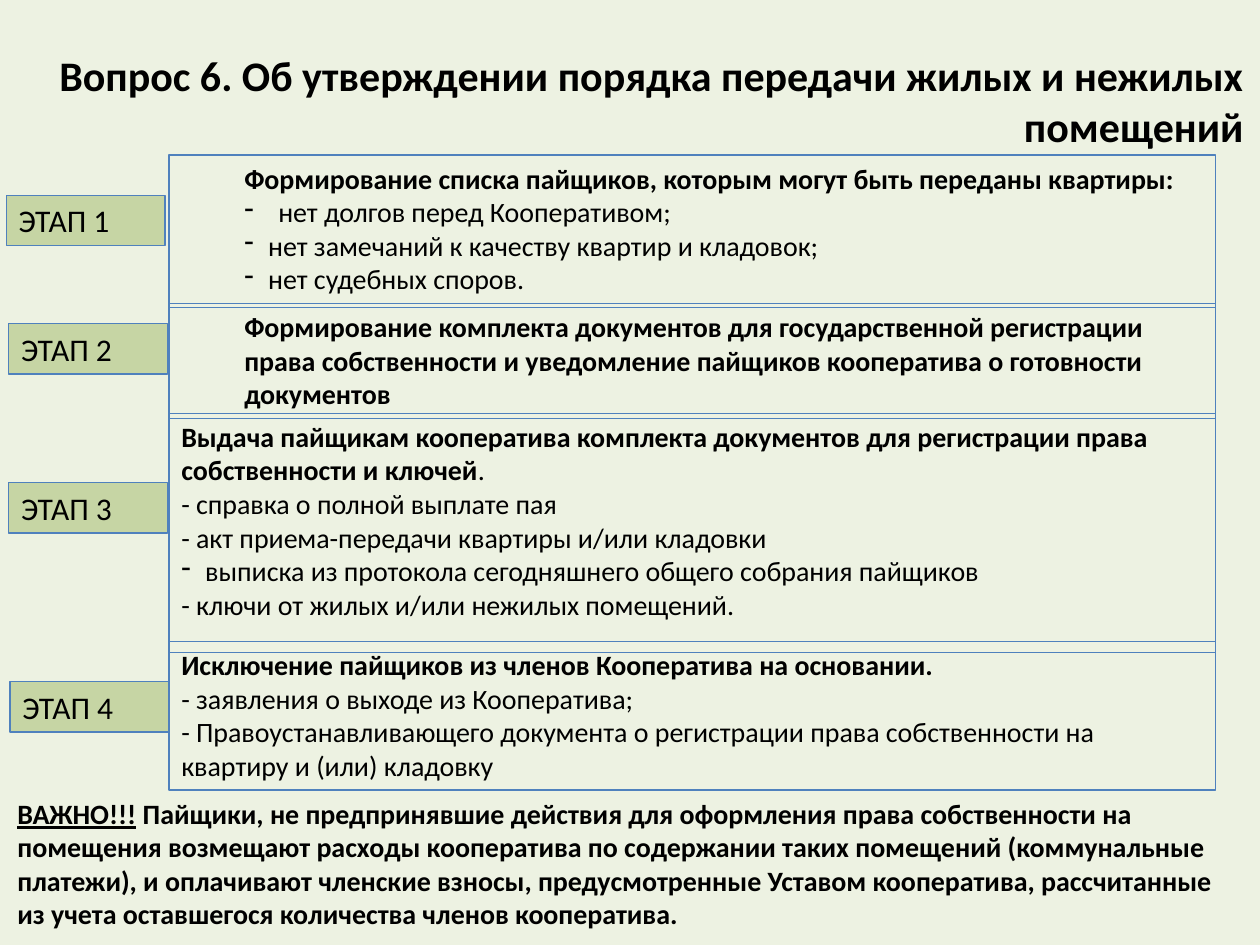
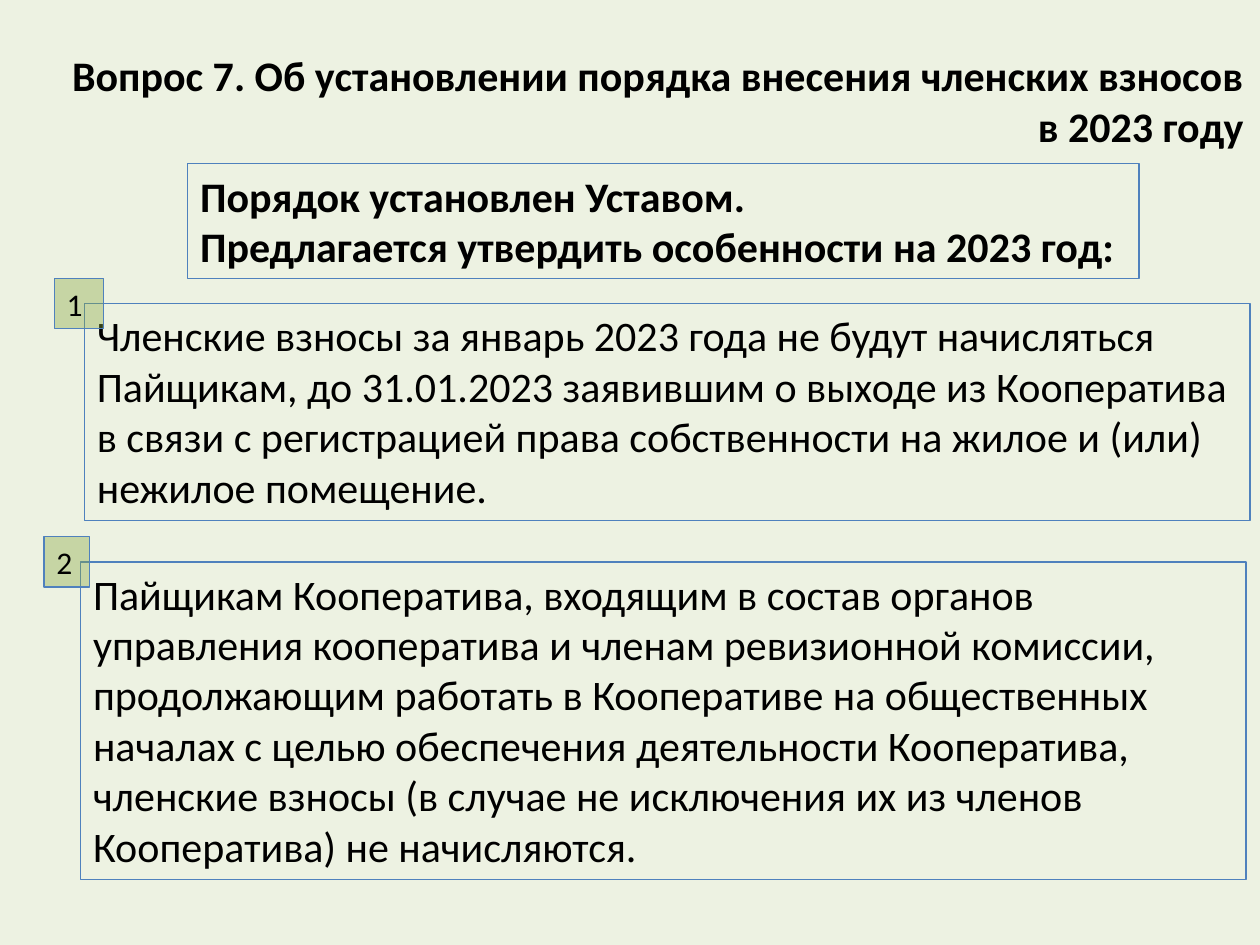
from lxml.etree import SubElement
from pptx import Presentation
from pptx.dml.color import RGBColor
from pptx.enum.shapes import MSO_SHAPE
from pptx.enum.text import MSO_ANCHOR, PP_ALIGN
from pptx.oxml.ns import qn
from pptx.util import Inches, Pt

FONT = "Calibri"
INK, EDGE, GREEN, PAPER = "000000", "4F81BD", "89A640", "EDF2E2"
TAG_H = 0.4
STAGE_X, STAGE_W, STAGE_TAG_W = 1.34, 8.31, 1.26
POINT_W = 9.25

# Each stage: top, height, tag left, tag top, lines (text, format)
STAGES = [
    (1.23, 1.21, 0.05, 1.55, [
        ("Формирование списка пайщиков, которым могут быть переданы квартиры:",
         dict(bold=True, left=0.6 - 0.1)),
        ("нет долгов перед Кооперативом;", dict(left=0.77, hang=0.27)),
        ("нет замечаний к качеству квартир и кладовок;", dict(left=0.69, hang=0.19)),
        ("нет судебных споров.", dict(left=0.69, hang=0.19)),
    ]),
    (2.41, 0.91, 0.07, 2.57, [
        ("Формирование комплекта документов для государственной регистрации "
         "права собственности и уведомление пайщиков кооператива о готовности "
         "документов", dict(bold=True, left=0.5)),
    ]),
    (3.28, 1.9, 0.07, 3.83, [
        ("Выдача пайщикам кооператива комплекта документов для регистрации "
         "права собственности и ключей", dict(bold=True)),
        (".", dict(join=True)),
        ("- справка о полной выплате пая", {}),
        ("- акт приема-передачи квартиры и/или кладовки", {}),
        ("выписка из протокола сегодняшнего общего собрания пайщиков",
         dict(left=0.19, hang=0.19)),
        ("- ключи от жилых и/или нежилых помещений.", {}),
    ]),
    (5.09, 1.18, 0.08, 5.41, [
        ("Исключение пайщиков из членов Кооператива на основании.", dict(bold=True)),
        ("- заявления о выходе из Кооператива;", {}),
        ("- Правоустанавливающего документа о регистрации права собственности "
         "на квартиру и (или) кладовку", {}),
    ]),
]

# Each point: left, top, height, tag left, tag width, text
POINTS = [
    (0.67, 2.41, 1.72, 0.43, 0.39,
     "Членские взносы за январь 2023 года не будут начисляться Пайщикам, "
     "до 31.01.2023 заявившим о выходе из Кооператива в связи с регистрацией "
     "права собственности на жилое и (или) нежилое помещение."),
    (0.64, 4.46, 2.52, 0.35, 0.36,
     "Пайщикам Кооператива, входящим в состав органов управления кооператива "
     "и членам ревизионной комиссии, продолжающим работать в Кооперативе на "
     "общественных началах с целью обеспечения деятельности Кооператива, "
     "членские взносы (в случае не исключения их из членов Кооператива) "
     "не начисляются."),
]


def paint(fill, color, alpha=None):
    """Fill with a solid colour; alpha is the opacity in percent."""
    fill.solid()
    fill.fore_color.rgb = RGBColor.from_string(color)
    if alpha is not None:
        node = fill._xPr.find(".//" + qn("a:srgbClr"))
        SubElement(node, qn("a:alpha")).set("val", str(alpha * 1000))


def write(frame, text, size=16, bold=False, under=False, left=0, hang=0,
          align=PP_ALIGN.LEFT, join=False):
    """Add a paragraph, or a run to the last one; hang gives it a dash bullet."""
    par = frame.paragraphs[-1]
    if par.runs and not join:
        par = frame.add_paragraph()
    if not join:
        par.alignment = align
        props = par._p.get_or_add_pPr()
        props.set("marL", str(Inches(left)))
        props.set("indent", str(-Inches(hang)))
        if hang:
            SubElement(props, qn("a:buFontTx"))
            SubElement(props, qn("a:buChar")).set("char", "-")
    run = par.add_run()
    run.text = text
    font = run.font
    font.name, font.size, font.bold, font.underline = FONT, Pt(size), bold, under
    font.color.rgb = RGBColor.from_string(INK)


def add_box(slide, x, y, w, h, tint=False):
    """Draw an outlined box and return its text frame."""
    box = slide.shapes.add_shape(
        MSO_SHAPE.RECTANGLE, Inches(x), Inches(y), Inches(w), Inches(h))
    box.shadow.inherit = False
    if tint:
        paint(box.fill, GREEN, 38)
    else:
        box.fill.background()
    paint(box.line.fill, EDGE)
    box.line.width = Pt(0.75)
    frame = box.text_frame
    frame.word_wrap = True
    frame.vertical_anchor = MSO_ANCHOR.TOP
    return frame


def add_tag(slide, x, y, w, text):
    write(add_box(slide, x, y, w, TAG_H, tint=True), text, size=18)


def add_page(deck, text):
    """Add a slide with the shared title style."""
    slide = deck.slides.add_slide(deck.slide_layouts[5])
    title = slide.shapes.title
    title.left, title.top = Inches(0.29), Inches(0.01)
    title.width, title.height = Inches(9.68), Inches(1.57)
    title.text_frame.vertical_anchor = MSO_ANCHOR.MIDDLE
    write(title.text_frame, text, size=24, bold=True, align=PP_ALIGN.RIGHT)
    return slide


def add_stage(slide, num, top, height, tag_x, tag_y, lines):
    frame = add_box(slide, STAGE_X, top, STAGE_W, height)
    for text, style in lines:
        write(frame, text, **style)
    add_tag(slide, tag_x, tag_y, STAGE_TAG_W, f"ЭТАП {num}")


def add_point(slide, num, x, y, height, tag_x, tag_w, text):
    write(add_box(slide, x, y, POINT_W, height), text, size=24)
    add_tag(slide, tag_x, y - TAG_H / 2, tag_w, str(num))


def add_note(slide, x, y, w, h):
    note = slide.shapes.add_textbox(Inches(x), Inches(y), Inches(w), Inches(h))
    frame = note.text_frame
    frame.word_wrap = True
    write(frame, "ВАЖНО!!!", bold=True, under=True)
    write(frame, " Пайщики, не предпринявшие действия для оформления права "
          "собственности на помещения возмещают расходы кооператива по "
          "содержании таких помещений (коммунальные платежи), и оплачивают "
          "членские взносы, предусмотренные Уставом кооператива, рассчитанные "
          "из учета оставшегося количества членов кооператива.",
          bold=True, join=True)


def stage_page(deck):
    slide = add_page(deck, "Вопрос 6. Об утверждении порядка передачи жилых "
                           "и нежилых помещений")
    for num, stage in enumerate(STAGES, 1):
        add_stage(slide, num, *stage)
    add_note(slide, 0.04, 6.27, 9.84, 1.18)


def fee_page(deck):
    slide = add_page(deck, "Вопрос 7. Об установлении порядка внесения "
                           "членских взносов в 2023 году")
    for num, point in enumerate(POINTS, 1):
        add_point(slide, num, *point)
    lead = add_box(slide, 1.49, 1.3, 7.55, 0.91)
    for text in ("Порядок установлен Уставом.",
                 "Предлагается утвердить особенности на 2023 год:"):
        write(lead, text, size=24, bold=True)


def main():
    deck = Presentation()
    deck.slide_width, deck.slide_height = Inches(10), Inches(7.5)
    paint(deck.slide_master.background.fill, PAPER)
    stage_page(deck)
    fee_page(deck)
    deck.save("out.pptx")


if __name__ == "__main__":
    main()
